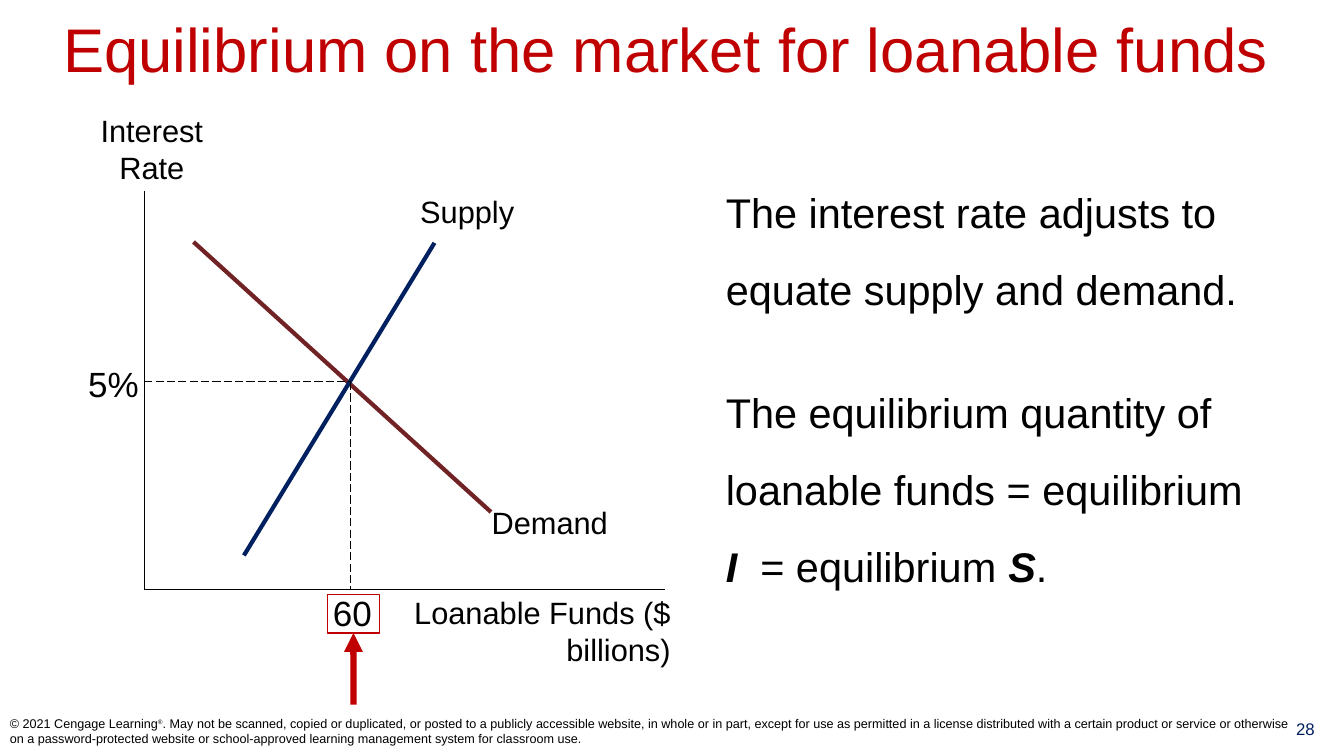
import pptx
import pptx.dml.color
import pptx.enum.dml
import pptx.enum.shapes
import pptx.enum.text
import pptx.oxml
import pptx.oxml.ns
import pptx.util

WIDTH, HEIGHT = pptx.util.Inches(13.333), pptx.util.Inches(7.5)
ALIGN = pptx.enum.text.PP_ALIGN
ANCHOR = pptx.enum.text.MSO_ANCHOR
BLACK, RED, NAVY, MAROON = "000000", "C00000", "002060", "702224"
AXIS_X, AXIS_Y = 10.73, 78
BALANCE_X, BALANCE_Y = 26.1, 50.53


def across(share):
    """Turn a percentage of the slide's width into a length."""
    return round(WIDTH * share / 100)


def down(share):
    """Turn a percentage of the slide's height into a length."""
    return round(HEIGHT * share / 100)


def box(left, top, width, height):
    """Return a rectangle given in percentages of the slide."""
    return across(left), down(top), across(width), down(height)


def paint(color_format, code):
    """Set a colour from a hex string."""
    color_format.rgb = pptx.dml.color.RGBColor.from_string(code)


def drawing(tag, **attributes):
    """Make an element of the drawing namespace."""
    element = pptx.oxml.parse_xml(f"<a:{tag} {pptx.oxml.ns.nsdecls('a')}/>")
    for key, value in attributes.items():
        element.set(key, value)
    return element


def write(paragraph, text, size, color=BLACK, strong=False):
    """Add one run, bold and italic when strong."""
    run = paragraph.add_run()
    run.text = text
    font = run.font
    font.name, font.size = "Arial", pptx.util.Pt(size)
    font.bold = font.italic = strong
    paint(font.color, color)
    return run


def place(shape, bounds):
    """Move a placeholder to its bounds."""
    shape.left, shape.top, shape.width, shape.height = box(*bounds)


def label(slide, bounds, lines, size, align=ALIGN.LEFT, color=BLACK, inset=0.1):
    """Add a text box whose lines are split by line breaks."""
    frame = slide.shapes.add_textbox(*box(*bounds)).text_frame
    frame.word_wrap = True
    frame.margin_left = frame.margin_right = pptx.util.Inches(inset)
    paragraph = frame.paragraphs[0]
    paragraph.alignment = align
    for index, line in enumerate(lines):
        if index:
            paragraph.add_line_break()
        write(paragraph, line, size, color)
    return frame


def segment(slide, start, end, color, weight, dashed=False):
    """Draw a straight line between two points."""
    connector = slide.shapes.add_connector(
        pptx.enum.shapes.MSO_CONNECTOR.STRAIGHT,
        across(start[0]), down(start[1]), across(end[0]), down(end[1]))
    connector.line.width = pptx.util.Pt(weight)
    paint(connector.line.color, color)
    if dashed:
        connector.line.dash_style = pptx.enum.dml.MSO_LINE.LONG_DASH
    connector._element.spPr.append(drawing("effectLst"))
    return connector


def heading(slide):
    """Fill the title."""
    title = slide.shapes.title
    place(title, (0.83, 1.47, 97.5, 9.6))
    frame = title.text_frame
    frame.word_wrap = False
    frame.vertical_anchor = ANCHOR.MIDDLE
    frame.paragraphs[0].alignment = ALIGN.CENTER
    write(frame.paragraphs[0], "Equilibrium on the market for loanable funds", 44, RED)


def explanation(slide):
    """Fill the body with the two statements on equilibrium."""
    body = slide.placeholders[1]
    place(body, (53.25, 20.4, 41.48, 57.87))
    frame = body.text_frame
    frame.word_wrap = True
    frame.vertical_anchor = ANCHOR.TOP
    statements = [
        [("The interest rate adjusts to equate supply and demand.", False)],
        [("The equilibrium quantity of loanable funds = equilibrium ", False),
         ("I", True), ("  = equilibrium ", False), ("S", True), (".", False)],
    ]
    for index, statement in enumerate(statements):
        paragraph = frame.add_paragraph() if index else frame.paragraphs[0]
        properties = paragraph._p.get_or_add_pPr()
        properties.set("marL", "0")
        properties.set("indent", "0")
        properties.append(drawing("buNone"))
        paragraph.line_spacing = 1.55
        paragraph.space_before = pptx.util.Pt(33 if index else 0)
        for text, strong in statement:
            write(paragraph, text, 29.6, strong=strong)


def market(slide):
    """Draw the axes, both curves and their equilibrium."""
    segment(slide, (AXIS_X, 25.33), (AXIS_X, AXIS_Y), BLACK, 0.75)
    segment(slide, (AXIS_X, AXIS_Y), (49.5, AXIS_Y), BLACK, 0.75)
    label(slide, (5.63, 14.13, 11.33, 11.07), ["Interest", "Rate"], 22, ALIGN.CENTER)
    label(slide, (30, 77.87, 20.63, 11.07), ["Loanable Funds ($ billions)"], 22, ALIGN.RIGHT)

    segment(slide, (14.4, 32), (36.53, 67.73), MAROON, 3)
    label(slide, (35.85, 66, 11.18, 6.27), ["Demand"], 22)
    segment(slide, (18.15, 73.47), (32.33, 32.13), NAVY, 3)
    label(slide, (30.53, 24.8, 9.53, 6.27), ["Supply"], 22)

    segment(slide, (AXIS_X, BALANCE_Y), (BALANCE_X, BALANCE_Y), BLACK, 0.75, True)
    segment(slide, (BALANCE_X, BALANCE_Y), (BALANCE_X, AXIS_Y), BLACK, 0.75, True)
    label(slide, (5.93, 47.33, 5.03, 6.93), ["5%"], 25, ALIGN.CENTER, inset=0)
    label(slide, (23.7, 77.6, 5.03, 6.93), ["60"], 25, ALIGN.CENTER, inset=0)


def highlight(slide):
    """Frame the equilibrium quantity and point an arrow at it."""
    border = slide.shapes.add_shape(
        pptx.enum.shapes.MSO_SHAPE.RECTANGLE, *box(24.38, 78.67, 3.83, 5.07))
    border.shadow.inherit = False
    border.fill.background()
    border.line.width = pptx.util.Pt(0.75)
    paint(border.line.color, RED)
    arrow = segment(slide, (26.3, 93.2), (26.3, 83.74), RED, 4.5)
    arrow.end_connect(border, 2)
    arrow.line._get_or_add_ln().append(drawing("tailEnd", type="triangle"))


def footer(slide):
    """Add the copyright line and the slide number."""
    label(slide, (94.28, 94.4, 5.7, 5.47), ["28"], 12, ALIGN.CENTER, NAVY)
    frame = label(slide, (0, 93.33, 96.9, 6.67), ["© 2021 Cengage Learning"], 9)
    frame.vertical_anchor = ANCHOR.MIDDLE
    notice = frame.paragraphs[0]
    mark = write(notice, "®", 8)
    mark.font._element.set("baseline", "30000")
    write(notice, ". May not be scanned, copied or duplicated, or posted to a publicly "
          "accessible website, in whole or in part, except for use as permitted in a "
          "license distributed with a certain product or service or otherwise on a "
          "password-protected website or school-approved learning management system "
          "for classroom use.", 9)


def main():
    """Build and save the slide."""
    deck = pptx.Presentation()
    deck.slide_width, deck.slide_height = WIDTH, HEIGHT
    slide = deck.slides.add_slide(deck.slide_layouts[1])
    heading(slide)
    explanation(slide)
    market(slide)
    highlight(slide)
    footer(slide)
    deck.save("out.pptx")


if __name__ == "__main__":
    main()
